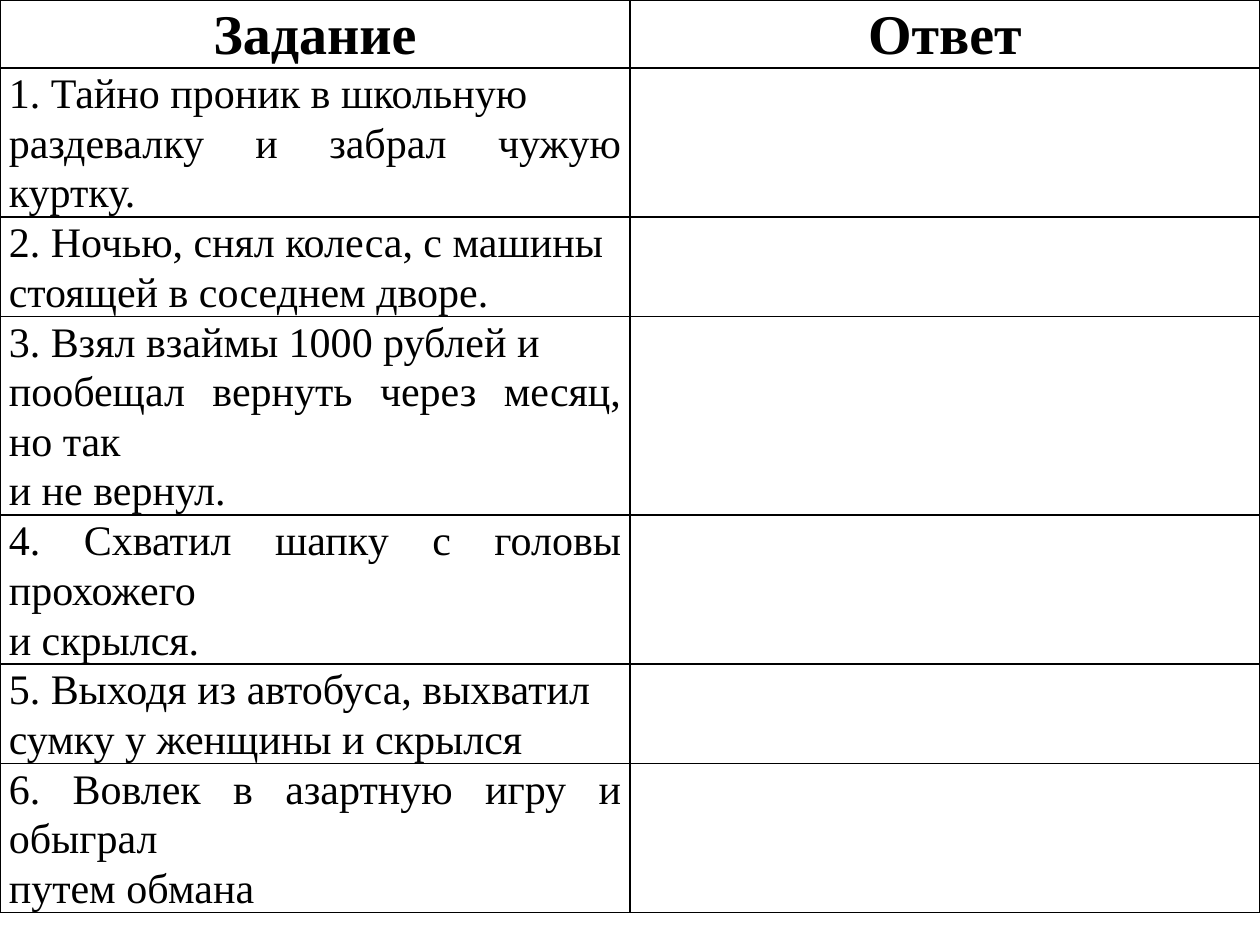
import pptx
import pptx.util
import pptx.dml.color
import pptx.enum.text
import pptx.oxml
import pptx.oxml.ns

Inches = pptx.util.Inches
ALIGN = pptx.enum.text.PP_ALIGN

HEADERS = ["Задание", "Ответ"]
TASKS = [
    ["1. Тайно проник в школьную", "раздевалку и забрал чужую куртку."],
    ["2. Ночью, снял колеса, с машины", "стоящей в соседнем дворе."],
    ["3. Взял взаймы 1000 рублей и", "пообещал вернуть через месяц, но так", "и не вернул."],
    ["4. Схватил шапку с головы прохожего", "и скрылся."],
    ["5. Выходя из автобуса, выхватил", "сумку у женщины и скрылся"],
    ["6. Вовлек в азартную игру и обыграл", "путем обмана"],
]
ROW_HEIGHTS = [0.54, 0.69, 0.73, 0.99, 0.65, 0.76, 1.07]
COLORS = {"ink": "000000"}
HEADER_FORMAT = {"name": "Times New Roman", "size": pptx.util.Pt(32), "bold": True}
TASK_FORMAT = {"name": "Times New Roman", "size": pptx.util.Pt(24), "bold": False}
MARGINS = {
    "margin_left": Inches(0.07),
    "margin_right": Inches(0.07),
    "margin_top": 0,
    "margin_bottom": 0,
}


def add_borders(cell):
    properties = cell._tc.get_or_add_tcPr()
    for side in ("lnL", "lnR", "lnT", "lnB"):
        properties.append(pptx.oxml.parse_xml(
            f'<a:{side} {pptx.oxml.ns.nsdecls("a")} w="12700"><a:solidFill>'
            f'<a:srgbClr val="{COLORS["ink"]}"/></a:solidFill></a:{side}>'
        ))


def write_cell(cell, lines, font_format, alignment):
    for index, line in enumerate(lines):
        frame = cell.text_frame
        para = frame.add_paragraph() if index else frame.paragraphs[0]
        para.alignment = alignment
        para.line_spacing = 1.07
        span = para.add_run()
        span.text = line
        for name, value in font_format.items():
            setattr(span.font, name, value)
        span.font.color.rgb = pptx.dml.color.RGBColor.from_string(COLORS["ink"])


deck = pptx.Presentation()
deck.slide_width, deck.slide_height = Inches(10), Inches(7.5)
page = deck.slides.add_slide(deck.slide_layouts[6])

table = page.shapes.add_table(
    len(ROW_HEIGHTS), len(HEADERS), 0, 0, Inches(10), Inches(sum(ROW_HEIGHTS))
).table
table.first_row = table.horz_banding = False
for row, height in zip(table.rows, ROW_HEIGHTS):
    row.height = Inches(height)

for cell in table.iter_cells():
    add_borders(cell)
    cell.fill.background()
    for name, value in MARGINS.items():
        setattr(cell, name, value)

for column, header in enumerate(HEADERS):
    write_cell(table.cell(0, column), [header], HEADER_FORMAT, ALIGN.CENTER)
for row, lines in enumerate(TASKS, start=1):
    write_cell(table.cell(row, 0), lines, TASK_FORMAT, ALIGN.JUSTIFY)

deck.save("out.pptx")
